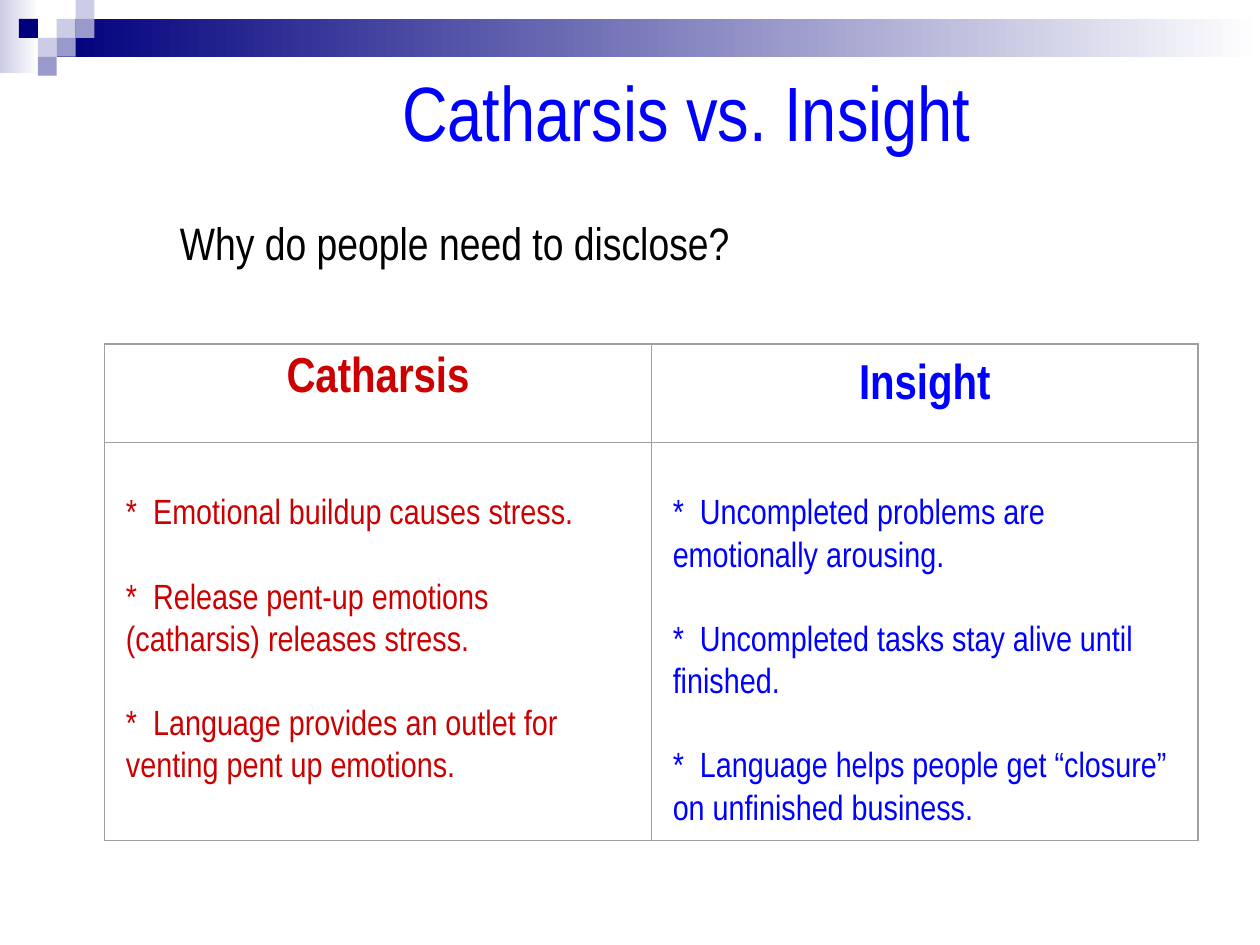
from lxml import etree
from pptx import Presentation
from pptx.dml.color import RGBColor
from pptx.enum import shapes, text
from pptx.oxml import ns
from pptx.util import Inches, Pt

NAVY = RGBColor(0x00, 0x00, 0x7D)
LAVENDER = RGBColor(0xCC, 0xCC, 0xE6)
PERIWINKLE = RGBColor(0x99, 0x99, 0xCC)
WHITE = RGBColor(0xFF, 0xFF, 0xFF)
BLACK = RGBColor(0x00, 0x00, 0x00)
BLUE = RGBColor(0x00, 0x00, 0xFF)
RED = RGBColor(0xCC, 0x00, 0x00)
GREY = RGBColor(0xA0, 0xA0, 0xA0)
FONT = "Arial Narrow"

COLUMNS = [
    ("Catharsis", RED, 0, [
        "*  Emotional buildup causes stress.",
        "*  Release pent-up emotions (catharsis) releases stress.",
        "*  Language provides an outlet for venting pent up emotions.",
    ]),
    ("Insight", BLUE, 0.05, [
        "*  Uncompleted problems are emotionally arousing.",
        "*  Uncompleted tasks stay alive until finished.",
        "*  Language helps people get “closure” on unfinished business.",
    ]),
]


def write(tf, lines, size, color, bold=False, align=text.PP_ALIGN.LEFT, gap=0, pitch=None):
    """Fill a text frame with one paragraph per line, gap points apart."""
    tf.word_wrap = True
    tf.text = "\n".join(lines)
    for i, p in enumerate(tf.paragraphs):
        p.alignment = align
        p.space_before = Pt(gap if i else 0)
        if pitch:
            p.line_spacing = Pt(pitch)
        for r in p.runs:
            r.font.name = FONT
            r.font.size = Pt(size)
            r.font.bold = bold
            r.font.color.rgb = color


def add_block(slide, left, top, width, height, color, fade_to=None):
    """Add an unlined rectangle, plain or fading to the right."""
    sp = slide.shapes.add_shape(shapes.MSO_SHAPE.RECTANGLE, Inches(left), Inches(top),
                                Inches(width), Inches(height))
    sp.shadow.inherit = False
    sp.line.fill.background()
    if fade_to is None:
        sp.fill.solid()
        sp.fill.fore_color.rgb = color
    else:
        sp.fill.gradient()
        sp.fill.gradient_angle = 0
        for stop, rgb in zip(sp.fill.gradient_stops, (color, fade_to)):
            stop.color.rgb = rgb


def add_header(slide, left, top, width, unit):
    """Draw the fading band and its mosaic of squares."""
    add_block(slide, left, top, 0.31, 0.58, LAVENDER, WHITE)
    add_block(slide, left + 3 * unit, top + unit, width - 3 * unit, 2 * unit, NAVY, WHITE)
    mosaic = [(3, 1, LAVENDER), (4, 0, LAVENDER), (4, 1, PERIWINKLE), (2, 2, LAVENDER),
              (1, 1, NAVY), (3, 2, PERIWINKLE), (2, 3, PERIWINKLE)]
    for col, row, color in mosaic:
        add_block(slide, left + col * unit, top + row * unit, unit, unit, color)


def add_text(slide, left, top, width, height, line, size, color, align, anchor):
    """Add a single-line text box."""
    box = slide.shapes.add_textbox(Inches(left), Inches(top), Inches(width), Inches(height))
    box.text_frame.vertical_anchor = anchor
    write(box.text_frame, [line], size, color, align=align)


def set_borders(cell, widths):
    """Draw the cell's borders, given as a width in points per side."""
    tc_pr = cell._tc.get_or_add_tcPr()
    for side in ("L", "R", "T", "B"):
        ln = etree.SubElement(tc_pr, ns.qn("a:ln" + side), w=str(Pt(widths[side])))
        fill = etree.SubElement(ln, ns.qn("a:solidFill"))
        etree.SubElement(fill, ns.qn("a:srgbClr"), val=str(GREY))


def add_comparison(slide, left, top, width, height, head_height):
    """Build the two-column table with a heading row."""
    table = slide.shapes.add_table(2, len(COLUMNS), Inches(left), Inches(top),
                                   Inches(width), Inches(height)).table
    table.first_row = table.horz_banding = False
    table.rows[0].height = Inches(head_height)
    table.rows[1].height = Inches(height - head_height)
    outer, inner = 1, 0.25
    for col, (heading, color, head_margin, points) in enumerate(COLUMNS):
        table.columns[col].width = Inches(width / len(COLUMNS))
        head, body = table.cell(0, col), table.cell(1, col)
        for row, cell in enumerate((head, body)):
            set_borders(cell, {"L": inner if col else outer, "R": outer if col else inner,
                               "T": inner if row else outer, "B": outer if row else inner})
            cell.fill.background()
            cell.vertical_anchor = text.MSO_ANCHOR.TOP
            cell.margin_left = cell.margin_right = Inches(0.17)
        head.margin_top = Inches(head_margin)
        body.margin_top = Inches(0.38)
        write(head.text_frame, [heading], 28, color, True, text.PP_ALIGN.CENTER, pitch=33.8)
        write(body.text_frame, points, 20, color, gap=24.1, pitch=24.1)


def main():
    """Build and save the slide."""
    prs = Presentation()
    prs.slide_width, prs.slide_height = Inches(10), Inches(7.5)
    slide = prs.slides.add_slide(prs.slide_layouts[6])
    add_header(slide, 0, 0, 10, 0.15)
    add_text(slide, 1.27, 0.25, 8.5, 1.25, "Catharsis vs. Insight ", 44, BLUE,
             text.PP_ALIGN.CENTER, text.MSO_ANCHOR.MIDDLE)
    add_text(slide, 1.33, 1.66, 8.17, 0.53, "Why do people need to disclose?", 26, BLACK,
             text.PP_ALIGN.LEFT, text.MSO_ANCHOR.TOP)
    add_comparison(slide, 0.83, 2.73, 8.68, 3.94, 0.78)
    prs.save("out.pptx")


if __name__ == "__main__":
    main()
